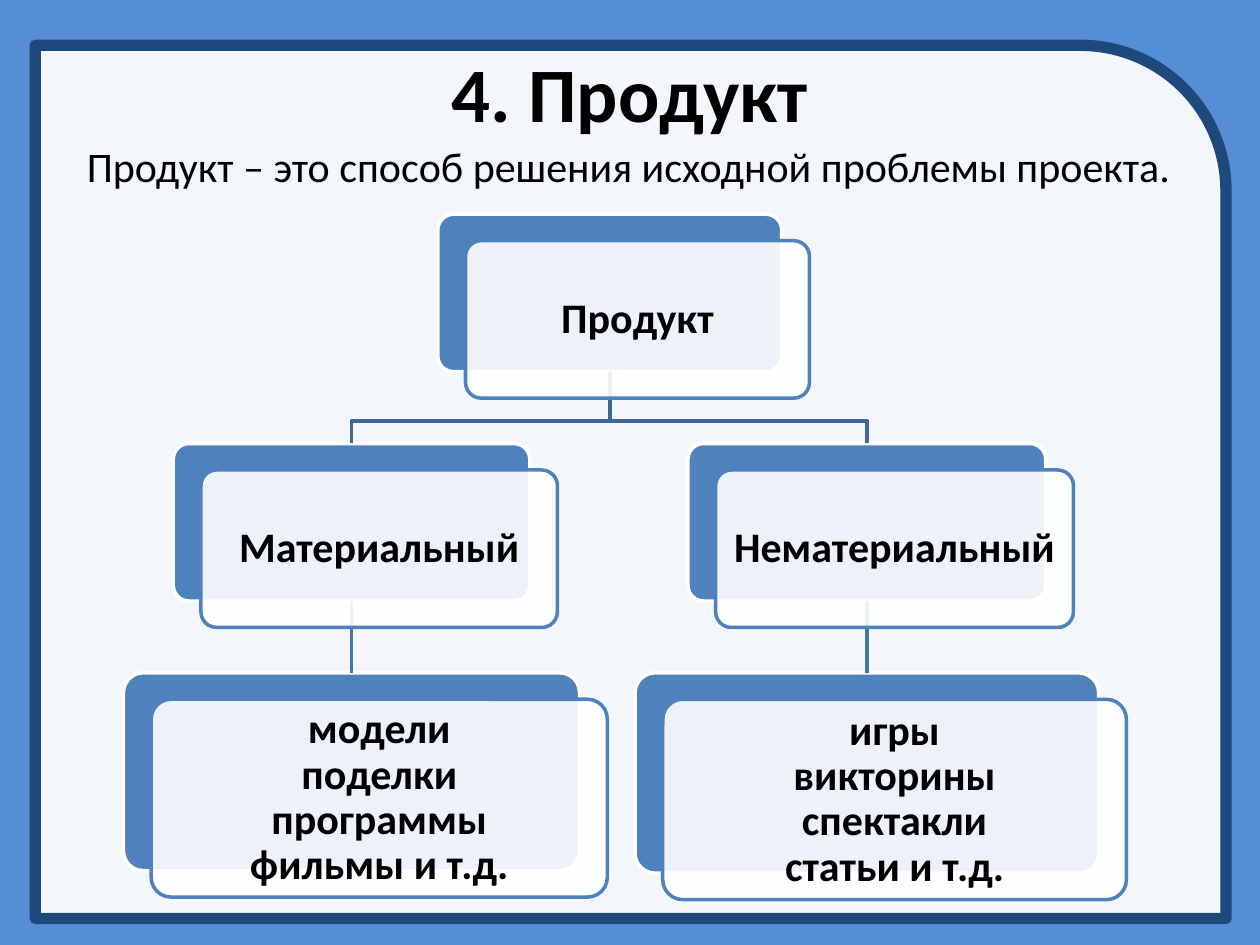
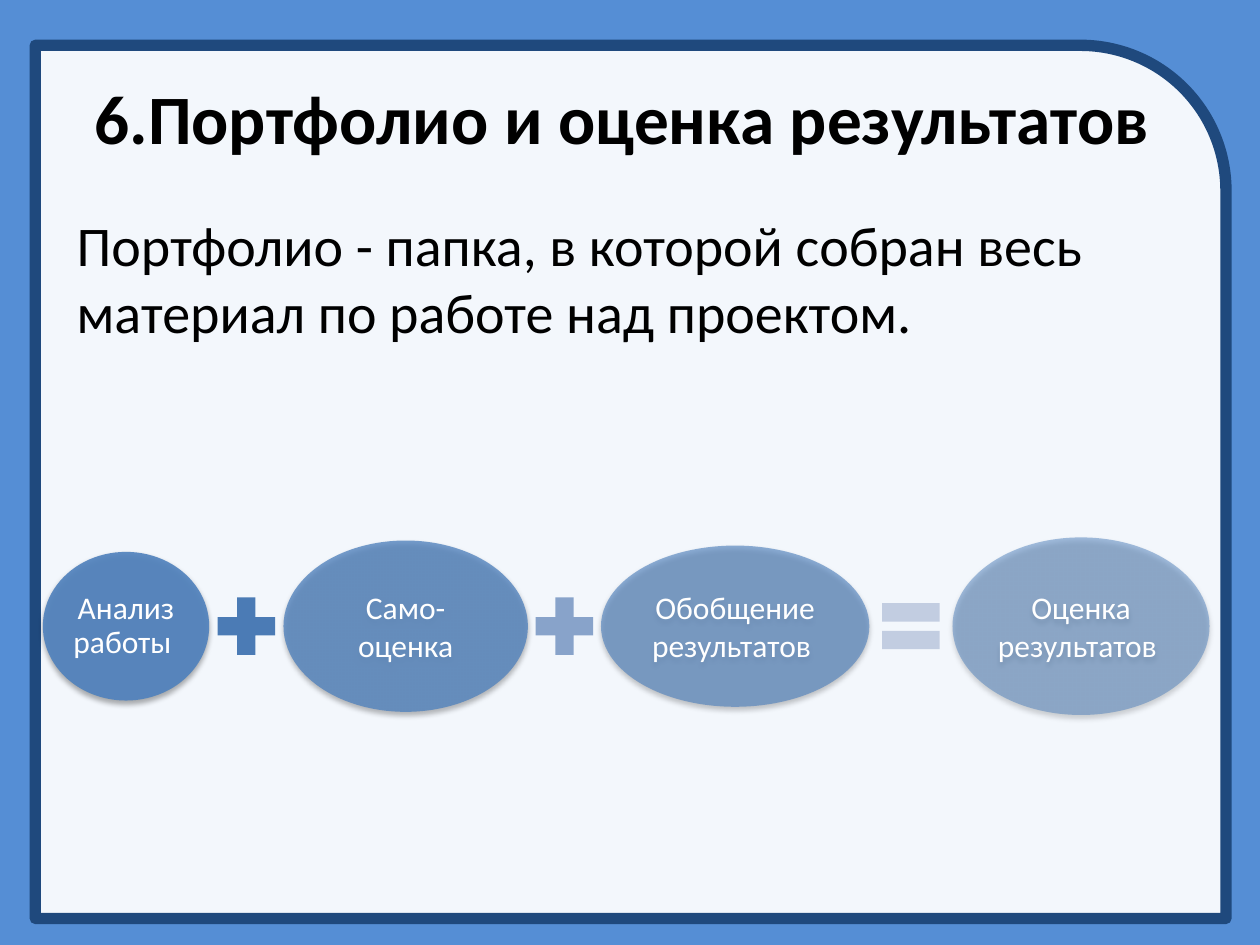
"""Builds two project-lesson slides: a product tree and a portfolio equation."""
import pptx
import pptx.util
import pptx.dml.color
import pptx.enum.shapes
import pptx.enum.text
import pptx.oxml
import pptx.oxml.ns

Inches, Pt = pptx.util.Inches, pptx.util.Pt
SHAPES = pptx.enum.shapes.MSO_SHAPE
ANCHOR = pptx.enum.text.MSO_ANCHOR
ALIGN = pptx.enum.text.PP_ALIGN
qn = pptx.oxml.ns.qn

THEME = {
    "font": "Calibri",
    "page": "558ED5", "frame": "1F497D", "paper": "FFFFFF", "accent": "4F81BD",
    "ink": "000000", "trunk": "3F6797", "twig": "4875AC",
    "title": 44, "long_title": 39.6, "lead": 32, "label": 24, "term": 18,
    "frame_width": 6.5, "rule": 2,
}

PRODUCT = {
    "title": "4. Продукт",
    "lead": "Продукт – это способ решения исходной проблемы проекта.",
}
TREE = {
    "root": {"lines": ["Продукт"], "row": 0, "middle": 4.84, "size": (2.73, 1.25), "parent": None},
    "material": {"lines": ["Материальный"], "row": 1, "middle": 2.79, "size": (2.83, 1.25), "parent": "root"},
    "intangible": {"lines": ["Нематериальный"], "row": 1, "middle": 6.88, "size": (2.84, 1.25), "parent": "root"},
    "things": {"lines": ["модели", "поделки", "программы", "фильмы и т.д."],
               "row": 2, "middle": 2.79, "size": (3.62, 1.57), "parent": "material"},
    "events": {"lines": ["игры", "викторины", "спектакли", "статьи и т.д."],
               "row": 2, "middle": 6.88, "size": (3.68, 1.59), "parent": "intangible"},
}
TREE_TOP, ROW_PITCH, BEND_DROP, CARD_SHIFT = 1.7, 1.82, 0.39, (0.22, 0.21)

PORTFOLIO = {
    "title": "6.Портфолио и оценка результатов ",
    "lead": "Портфолио - папка, в которой собран весь материал по работе над проектом.",
}
TERMS = [
    {"lines": ["Анализ работы "], "size": (1.32, 1.18), "alpha": 90, "spacing": 0.9},
    {"lines": ["Само-", "оценка"], "size": (1.94, 1.36), "alpha": 77, "spacing": 1.0},
    {"lines": ["Обобщение результатов "], "size": (2.13, 1.28), "alpha": 63, "spacing": 1.0},
    {"lines": ["Оценка результатов "], "size": (2.04, 1.41), "alpha": 50, "spacing": 1.0},
]
SIGNS = [
    {"kind": SHAPES.MATH_PLUS, "color": "4B7BB5", "gap": 0.59},
    {"kind": SHAPES.MATH_PLUS, "color": "88A3CA", "gap": 0.58},
    {"kind": SHAPES.MATH_EQUAL, "color": "C2CDE1", "gap": 0.66},
]
CHAIN_LEFT, CHAIN_AXIS, SIGN_SIZE = 0.34, 4.97, 0.62


def rgb(color):
    return pptx.dml.color.RGBColor.from_string(color)


def assign(target, values):
    for name, value in values.items():
        setattr(target, name, value)


def add_xml(parent, tag, body="", **attributes):
    listed = " ".join(f'{name}="{value}"' for name, value in attributes.items())
    xml = f'<a:{tag} {pptx.oxml.ns.nsdecls("a")} {listed}>{body}</a:{tag}>'
    parent.append(pptx.oxml.parse_xml(xml))


def stroke(shape, color, width):
    shape.line.color.rgb = rgb(color)
    shape.line.width = Pt(width)


def write(shape, lines, size, color=THEME["ink"], bold=False, align=ALIGN.CENTER,
          anchor=ANCHOR.MIDDLE, insets=(0.1, 0.05), spacing=1.0):
    frame = shape.text_frame
    across, down = map(Inches, insets)
    assign(frame, {"word_wrap": True, "vertical_anchor": anchor, "margin_left": across,
                   "margin_right": across, "margin_top": down, "margin_bottom": down})
    for index, line in enumerate(lines):
        para = frame.add_paragraph() if index else frame.paragraphs[0]
        assign(para, {"alignment": align, "line_spacing": spacing})
        span = para.add_run()
        span.text = line
        assign(span.font, {"name": THEME["font"], "size": Pt(size), "bold": bold})
        span.font.color.rgb = rgb(color)


def add_block(page, kind, area, fill, alpha=100, line=None, width=THEME["rule"]):
    shape = page.shapes.add_shape(kind, *map(Inches, area))
    shape.shadow.inherit = False
    shape.fill.solid()
    shape.fill.fore_color.rgb = rgb(fill)
    if alpha < 100:
        add_xml(shape.element.spPr.find(qn("a:solidFill"))[0], "alpha", val=alpha * 1000)
    if line:
        stroke(shape, line, width)
    else:
        shape.line.fill.background()
    return shape


def add_text(page, area, text, size, **style):
    write(page.shapes.add_textbox(*map(Inches, area)), [text], size, **style)


def add_page(deck, words, title_height, title_size, lead_area, lead_size):
    page = deck.slides.add_slide(deck.slide_layouts[6])
    page.background.fill.solid()
    page.background.fill.fore_color.rgb = rgb(THEME["page"])
    add_block(page, SHAPES.ROUND_1_RECTANGLE, (0.28, 0.36, 9.45, 6.93), THEME["paper"], 93,
              THEME["frame"], THEME["frame_width"])
    add_text(page, (0.5, 0.3, 9, title_height), words["title"], title_size, bold=True)
    add_text(page, lead_area, words["lead"], lead_size, align=ALIGN.LEFT, anchor=ANCHOR.TOP)
    return page


def add_card(page, node, shift, **style):
    width, height = node["size"]
    left = node["middle"] - width / 2 + shift[0]
    top = TREE_TOP + node["row"] * ROW_PITCH + shift[1]
    card = add_block(page, SHAPES.ROUNDED_RECTANGLE, (left, top, width, height), **style)
    card.adjustments[0] = 0.1
    return card


def add_branch(page, parent, child):
    """Draws a bent line from the parent's bottom to the child's top."""
    start = TREE_TOP + parent["row"] * ROW_PITCH + parent["size"][1]
    end = TREE_TOP + child["row"] * ROW_PITCH
    points = [(parent["middle"], start + BEND_DROP), (child["middle"], start + BEND_DROP),
              (child["middle"], end)]
    builder = page.shapes.build_freeform(Inches(parent["middle"]), Inches(start))
    builder.add_line_segments([tuple(map(Inches, point)) for point in points], close=False)
    branch = builder.convert_to_shape()
    branch.shadow.inherit = False
    branch.fill.background()
    stroke(branch, THEME["trunk"], THEME["rule"])


def add_drop(page, upper, lower):
    drop = page.shapes.add_connector(pptx.enum.shapes.MSO_CONNECTOR.STRAIGHT, 0, 0, 0, 0)
    drop.begin_connect(upper, 2)
    drop.end_connect(lower, 0)
    stroke(drop, THEME["twig"], THEME["rule"])
    add_xml(drop.element.spPr, "effectLst")


def draw_tree(page):
    backs = {name: add_card(page, node, (0, 0), fill=THEME["accent"], line=THEME["paper"])
             for name, node in TREE.items()}
    for name, node in TREE.items():
        parent = node["parent"]
        if parent and TREE[parent]["middle"] == node["middle"]:
            add_drop(page, backs[parent], backs[name])
        elif parent:
            add_branch(page, TREE[parent], node)
    for node in TREE.values():
        front = add_card(page, node, CARD_SHIFT, fill=THEME["paper"], alpha=90, line=THEME["accent"])
        write(front, node["lines"], THEME["label"], bold=True, insets=(0.1, 0.1), spacing=0.9)


def add_soft_shadow(shape):
    effects = shape.element.spPr.find(qn("a:effectLst"))
    shade = '<a:srgbClr val="000000"><a:alpha val="35000"/></a:srgbClr>'
    add_xml(effects, "outerShdw", shade, blurRad=Pt(3.1), dist=Pt(1.8), dir=90 * 60000, rotWithShape=0)


def draw_equation(page):
    left = CHAIN_LEFT
    for index, term in enumerate(TERMS):
        width, height = term["size"]
        oval = add_block(page, SHAPES.OVAL, (left, CHAIN_AXIS - height / 2, width, height),
                         THEME["accent"], term["alpha"])
        add_soft_shadow(oval)
        write(oval, term["lines"], THEME["term"], THEME["paper"], insets=(0.03, 0.03),
              spacing=term["spacing"])
        left += width
        if index < len(SIGNS):
            sign = SIGNS[index]
            area = (left + (sign["gap"] - SIGN_SIZE) / 2, CHAIN_AXIS - SIGN_SIZE / 2, SIGN_SIZE, SIGN_SIZE)
            add_block(page, sign["kind"], area, sign["color"])
            left += sign["gap"]


def main():
    deck = pptx.Presentation()
    assign(deck, {"slide_width": Inches(10), "slide_height": Inches(7.5)})
    draw_tree(add_page(deck, PRODUCT, 0.85, THEME["title"], (0.59, 1.07, 8.98, 0.63), THEME["label"]))
    draw_equation(add_page(deck, PORTFOLIO, 1.25, THEME["long_title"], (0.51, 1.62, 9, 2.08), THEME["lead"]))
    deck.save("out.pptx")


if __name__ == "__main__":
    main()
